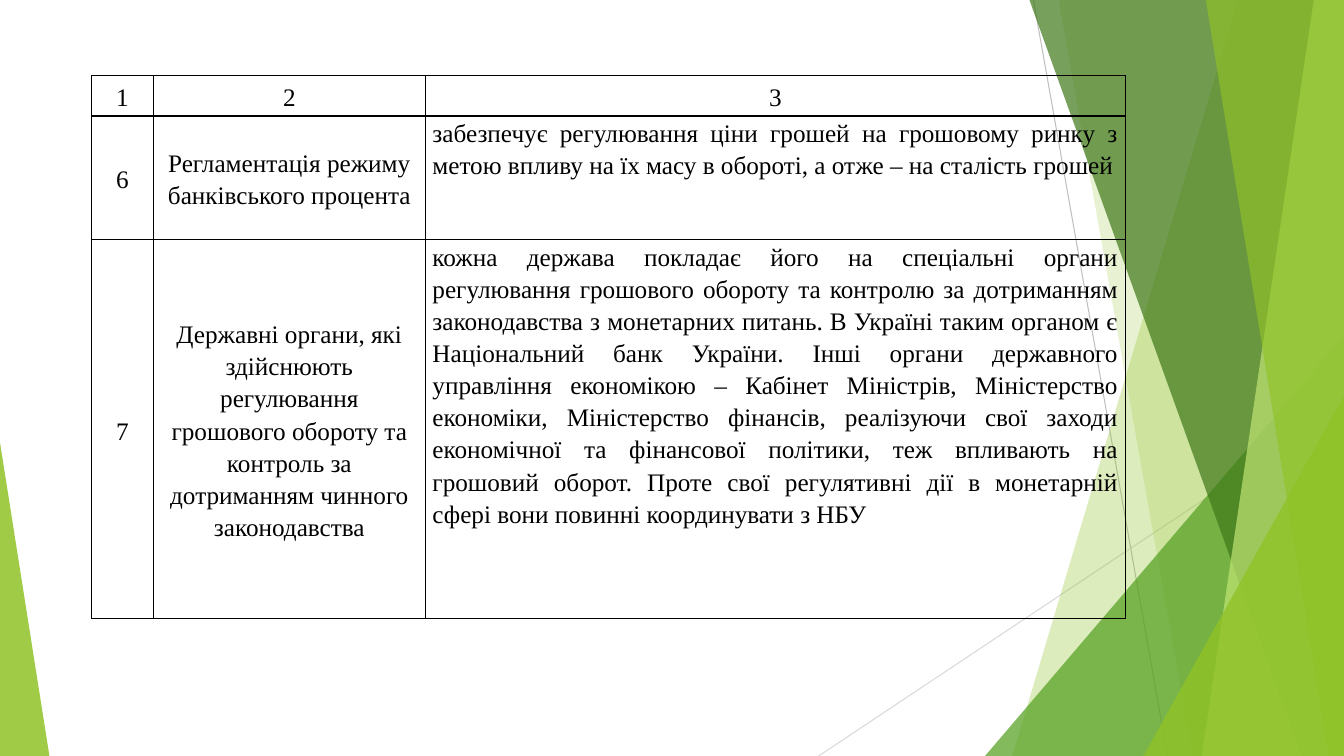
import pptx
import pptx.util
import pptx.dml.color
import pptx.enum.shapes
import pptx.enum.text
import pptx.oxml
import pptx.oxml.ns
import lxml.etree

Inches = pptx.util.Inches
RGBColor = pptx.dml.color.RGBColor
Align = pptx.enum.text.PP_ALIGN
Anchor = pptx.enum.text.MSO_ANCHOR
qn = pptx.oxml.ns.qn

LIME = RGBColor(0x90, 0xC2, 0x26)
PALE_LIME = RGBColor(0xC0, 0xE4, 0x74)
GREEN = RGBColor(0x54, 0xA0, 0x21)
DARK_GREEN = RGBColor(0x3F, 0x78, 0x19)
GREY = RGBColor(0xBF, 0xBF, 0xBF)
LIGHT_GREY = RGBColor(0xD9, 0xD9, 0xD9)
BLACK = RGBColor(0, 0, 0)
WIDTH, HEIGHT = 13.33, 7.5

deck = pptx.Presentation()
deck.slide_width, deck.slide_height = Inches(WIDTH), Inches(HEIGHT)
page = deck.slides.add_slide(deck.slide_layouts[6])
shapes = page.shapes


def paint(shape, color, opacity):
    """Fill a borderless shape; opacity is a percentage."""
    shape.shadow.inherit = False
    shape.line.fill.background()
    shape.fill.solid()
    shape.fill.fore_color.rgb = color
    srgb = shape.fill._xPr.find(".//" + qn("a:srgbClr"))
    lxml.etree.SubElement(srgb, qn("a:alpha"), val=str(opacity * 1000))


# Thin lines behind the facets
for x1, y1, x2, y2, color in [
    (10.25, 0, 11.58, HEIGHT, GREY),
    (WIDTH, 4.03, 8.12, HEIGHT, LIGHT_GREY),
]:
    line = shapes.add_connector(
        pptx.enum.shapes.MSO_CONNECTOR.STRAIGHT,
        Inches(x1), Inches(y1), Inches(x2), Inches(y2))
    line.line.color.rgb = color
    line.line.width = pptx.util.Pt(0.75)
    lxml.etree.SubElement(line._element.spPr, qn("a:effectLst"))

# Facets, back to front. A band runs from its top x and bottom x to the right
# edge; a triangle stands on the bottom edge: left, width, height, apex share.
for kind, place, color, opacity in [
    ("band", (12.28, 10.04), LIME, 30),
    ("band", (10.5, 11.83), LIME, 20),
    ("triangle", (9.77, 3.56, 4.17, 1), GREEN, 72),
    ("band", (10.21, 12.91), DARK_GREEN, 70),
    ("band", (13.03, 11.92), PALE_LIME, 70),
    ("band", (11.96, 13.18), LIME, 65),
    ("triangle", (11.34, 1.99, 3.57, 1), LIME, 80),
    ("triangle", (0, 0.49, 3.11, 0), LIME, 85),
]:
    if kind == "band":
        top_x, bottom_x = place
        builder = shapes.build_freeform(Inches(top_x), 0)
        builder.add_line_segments([
            (Inches(WIDTH), 0),
            (Inches(WIDTH), Inches(HEIGHT)),
            (Inches(bottom_x), Inches(HEIGHT)),
        ])
        facet = builder.convert_to_shape()
    else:
        left, width, height, apex = place
        facet = shapes.add_shape(
            pptx.enum.shapes.MSO_SHAPE.ISOSCELES_TRIANGLE,
            Inches(left), Inches(HEIGHT - height), Inches(width), Inches(height))
        facet.adjustments[0] = apex
    paint(facet, color, opacity)

# Table
COLUMNS = [0.61, 2.7, 6.94]
ROWS = [0.4, 1.23, 3.76]
CONTENT = [
    ("1", "2", "3"),
    ("6", "Регламентація режиму банківського процента",
     "забезпечує регулювання ціни грошей на грошовому ринку з метою впливу на "
     "їх масу в обороті, а отже – на сталість грошей"),
    ("7", "Державні органи, які здійснюють регулювання грошового обороту та "
     "контроль за дотриманням чинного законодавства",
     "кожна держава покладає його на спеціальні органи регулювання грошового "
     "обороту та контролю за дотриманням законодавства з монетарних питань. "
     "В Україні таким органом є Національний банк України. Інші органи "
     "державного управління економікою – Кабінет Міністрів, Міністерство "
     "економіки, Міністерство фінансів, реалізуючи свої заходи економічної та "
     "фінансової політики, теж впливають на грошовий оборот. Проте свої "
     "регулятивні дії в монетарній сфері вони повинні координувати з НБУ"),
]
table = shapes.add_table(
    len(ROWS), len(COLUMNS), Inches(0.91), Inches(0.75),
    Inches(sum(COLUMNS)), Inches(sum(ROWS))).table
table.first_row = table.horz_banding = False
for column, width in zip(table.columns, COLUMNS):
    column.width = Inches(width)
for row, height in zip(table.rows, ROWS):
    row.height = Inches(height)

for row_index, texts in enumerate(CONTENT):
    for column_index, text in enumerate(texts):
        cell = table.cell(row_index, column_index)
        is_description = row_index > 0 and column_index == 2
        cell.text = text
        cell.margin_left = cell.margin_right = Inches(0.07)
        cell.margin_top = cell.margin_bottom = 0
        cell.vertical_anchor = Anchor.TOP if is_description else Anchor.MIDDLE
        para = cell.text_frame.paragraphs[0]
        para.alignment = Align.JUSTIFY if is_description else Align.CENTER
        para.line_spacing = 1.15
        para.font.name = "Times New Roman"
        para.font.size = pptx.util.Pt(18)
        para.font.color.rgb = BLACK
        properties = cell._tc.get_or_add_tcPr()
        for side in ("a:lnL", "a:lnR", "a:lnT", "a:lnB"):
            border = lxml.etree.SubElement(
                properties, qn(side), w=str(pptx.util.Pt(1)))
            fill = lxml.etree.SubElement(border, qn("a:solidFill"))
            lxml.etree.SubElement(fill, qn("a:srgbClr"), val=str(BLACK))
        cell.fill.background()

deck.save("out.pptx")
